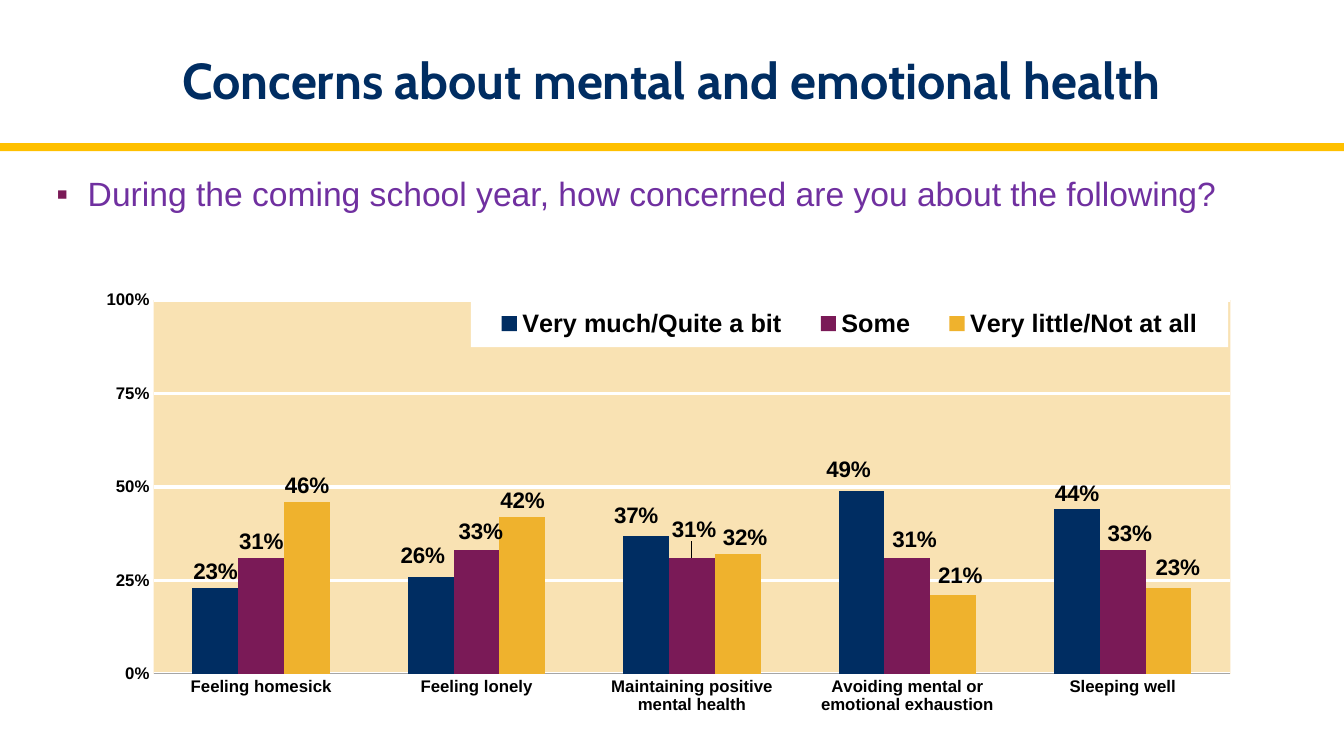
from lxml.etree import SubElement
from pptx import Presentation
from pptx.chart.data import CategoryChartData
from pptx.dml.color import RGBColor
from pptx.enum.chart import XL_CHART_TYPE, XL_LABEL_POSITION, XL_LEGEND_POSITION, XL_TICK_MARK
from pptx.enum.shapes import MSO_SHAPE
from pptx.enum.text import MSO_ANCHOR, PP_ALIGN
from pptx.oxml import parse_xml
from pptx.oxml.ns import nsdecls, qn
from pptx.util import Inches, Pt

COLORS = {
    "navy": "002D62", "plum": "7A1A57", "gold": "EFB22D", "plot": "EFAA22",
    "rule": "FFC000", "question": "7030A0", "axis": "A6A6A6",
    "black": "000000", "white": "FFFFFF",
}
CHART_WIDTH, CHART_HEIGHT = 11.7, 4.64
CATEGORIES = [
    "Feeling homesick", "Feeling lonely", "Maintaining positive mental health",
    "Avoiding mental or emotional exhaustion", "Sleeping well",
]
ANSWERS = [
    ("Very much/Quite a bit", "navy", [0.23, 0.26, 0.37, 0.49, 0.44],
     {1: (-0.08, -0.05), 2: (-0.1, -0.04), 3: (-0.13, -0.05)}),
    ("Some", "plum", [0.31, 0.33, 0.31, 0.31, 0.33],
     {1: (0.04, -0.03), 2: (0.02, -0.12), 3: (0.07, -0.02), 4: (0.07, -0.01)}),
    ("Very little/Not at all", "gold", [0.46, 0.42, 0.32, 0.21, 0.23],
     {2: (0.07, -0.01), 3: (0.07, -0.04), 4: (0.09, -0.04)}),
]


def color(name):
    return RGBColor.from_string(COLORS[name])


def layout_xml(**values):
    tags = "".join(f'<c:{tag} val="{value}"/>' for tag, value in values.items())
    return parse_xml(f'<c:layout {nsdecls("c")}><c:manualLayout>{tags}</c:manualLayout></c:layout>')


def fill_xml(name, alpha):
    return parse_xml(
        f'<c:spPr {nsdecls("c", "a")}><a:solidFill><a:srgbClr val="{COLORS[name]}">'
        f'<a:alpha val="{alpha * 1000}"/></a:srgbClr></a:solidFill></c:spPr>'
    )


def replace_layout(element, index, layout):
    for old in element.findall(qn("c:layout")):
        element.remove(old)
    element.insert(index, layout)


class SlideBuilder:
    def __init__(self, page):
        self.page = page

    def font(self, font, size, name="black", bold=True, face="Arial"):
        font.size, font.bold, font.name = Pt(size), bold, face
        font.color.rgb = color(name)

    def place(self, box, left, top, width, height):
        box.left, box.top = Inches(left), Inches(top)
        box.width, box.height = Inches(width), Inches(height)

    def rule(self, left, top, width, height):
        bar = self.page.shapes.add_shape(
            MSO_SHAPE.RECTANGLE, Inches(left), Inches(top), Inches(width), Inches(height))
        bar.shadow.inherit = False
        bar.fill.solid()
        bar.fill.fore_color.rgb = color("rule")
        bar.line.fill.background()

    def title(self, text, *bounds):
        box = self.page.shapes.title
        self.place(box, *bounds)
        frame = box.text_frame
        frame.text = text
        frame.vertical_anchor = MSO_ANCHOR.MIDDLE
        para = frame.paragraphs[0]
        para.alignment = PP_ALIGN.CENTER
        self.font(para.runs[0].font, 36, "navy", face="Cabin")

    def bullet(self, text, *bounds):
        box = self.page.placeholders[1]
        self.place(box, *bounds)
        frame = box.text_frame
        frame.text = text
        frame.word_wrap = True
        frame.vertical_anchor = MSO_ANCHOR.TOP
        para = frame.paragraphs[0]
        para.level = 1
        properties = para._p.get_or_add_pPr()
        properties.set("marL", str(Inches(0.44)))
        properties.set("indent", str(Inches(-0.31)))
        bullet_color = SubElement(properties, qn("a:buClr"))
        SubElement(bullet_color, qn("a:srgbClr"), val=COLORS["plum"])
        SubElement(properties, qn("a:buFont"), typeface="Arial")
        SubElement(properties, qn("a:buChar"), char="▪")
        para.space_before = Pt(0)
        self.font(para.runs[0].font, 24, "question", bold=False)

    def chart(self, left, top):
        data = CategoryChartData(number_format="0%")
        data.categories = CATEGORIES
        for name, _, values, _ in ANSWERS:
            data.add_series(name, values)
        chart = self.page.shapes.add_chart(
            XL_CHART_TYPE.COLUMN_CLUSTERED, Inches(left), Inches(top),
            Inches(CHART_WIDTH), Inches(CHART_HEIGHT), data).chart
        chart.has_title = False
        self.font(chart.font, 12)
        plot = chart.plots[0]
        plot.gap_width, plot.overlap, plot.vary_by_categories = 170, 0, False
        area = chart._chartSpace.chart.plotArea
        replace_layout(area, 0, layout_xml(
            layoutTarget="inner", xMode="edge", yMode="edge", x=0.078, y=0.032, w=0.913, h=0.799))
        area.append(fill_xml("plot", 34))
        for series, (_, fill, _, offsets) in zip(plot.series, ANSWERS):
            self.series(series, fill, offsets)
        self.axes(chart)
        self.legend(chart)

    def series(self, series, fill, offsets):
        series.format.fill.solid()
        series.format.fill.fore_color.rgb = color(fill)
        series.invert_if_negative = False
        labels = series.data_labels
        labels.show_value = True
        labels.number_format, labels.number_format_is_linked = "0%", False
        labels.position = XL_LABEL_POSITION.OUTSIDE_END
        self.font(labels.font, 16)
        for index in offsets:
            label = series.points[index].data_label
            self.font(label.font, 16)
            label.position = XL_LABEL_POSITION.OUTSIDE_END
        for element, (across, down) in zip(labels._element.findall(qn("c:dLbl")), offsets.values()):
            replace_layout(element, 1, layout_xml(x=across / CHART_WIDTH, y=down / CHART_HEIGHT))

    def axes(self, chart):
        for axis in (chart.category_axis, chart.value_axis):
            axis.major_tick_mark = axis.minor_tick_mark = XL_TICK_MARK.NONE
            self.font(axis.tick_labels.font, 12)
        line = chart.category_axis.format.line
        line.color.rgb, line.width = color("axis"), Pt(0.55)
        scale = chart.value_axis
        scale.minimum_scale, scale.maximum_scale, scale.major_unit = 0, 1, 0.25
        scale.tick_labels.number_format = "0%"
        scale.tick_labels.number_format_is_linked = False
        scale.format.line.fill.background()
        grid = scale.major_gridlines.format.line
        grid.color.rgb, grid.width = color("white"), Pt(2.25)

    def legend(self, chart):
        chart.has_legend = True
        legend = chart.legend
        legend.position = XL_LEGEND_POSITION.CORNER
        legend.include_in_layout = False
        self.font(legend.font, 18)
        element = legend._element
        replace_layout(element, 1, layout_xml(
            xMode="edge", yMode="edge", x=0.347, y=0.032, w=0.642, h=0.1))
        element.find(qn("c:txPr")).addprevious(fill_xml("white", 100))


def main():
    deck = Presentation()
    deck.slide_width, deck.slide_height = Inches(13.33), Inches(7.5)
    builder = SlideBuilder(deck.slides.add_slide(deck.slide_layouts[1]))
    builder.rule(0, 1.42, 13.33, 0.08)
    builder.title("Concerns about mental and emotional health", 0.44, 0.25, 12.44, 1.08)
    builder.bullet(
        "During the coming school year, how concerned are you about the following?",
        0.33, 1.67, 12.56, 2.08)
    builder.chart(0.61, 2.83)
    deck.save("out.pptx")


if __name__ == "__main__":
    main()
